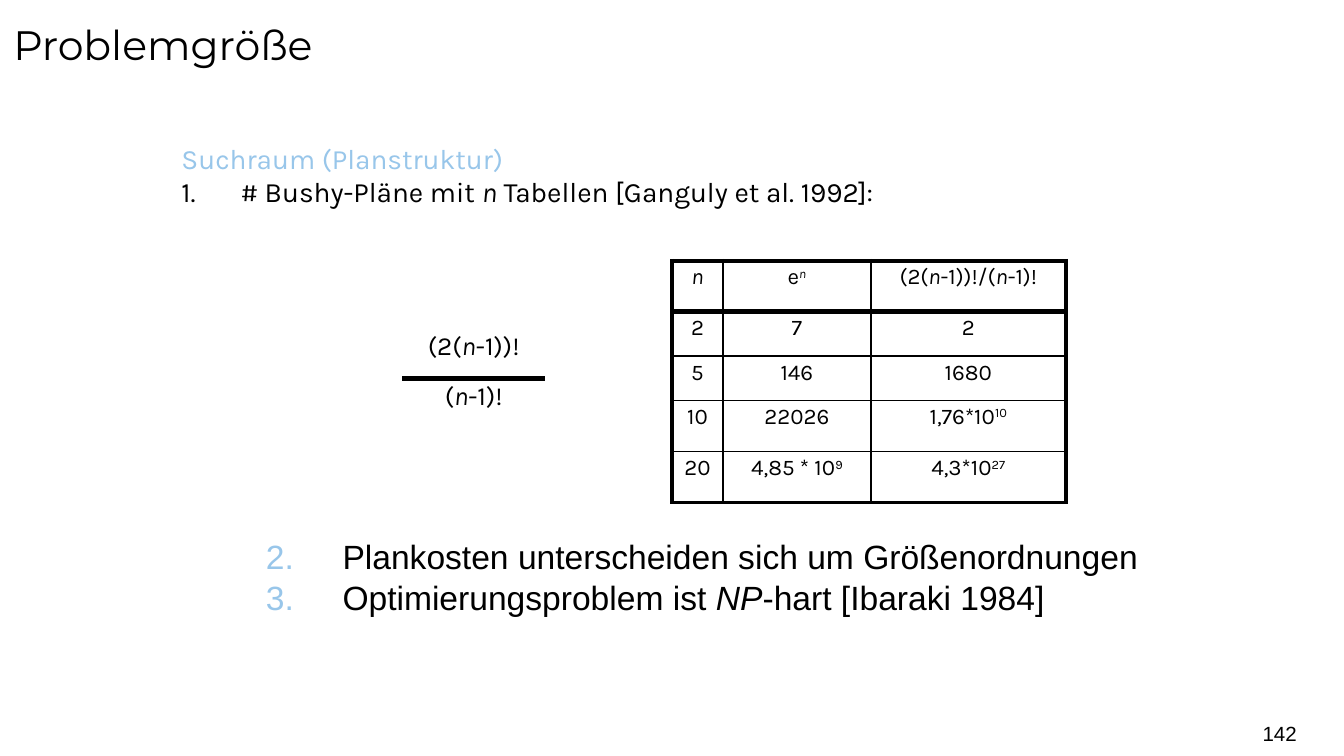
from dataclasses import dataclass

from lxml import etree
from pptx import Presentation
from pptx.dml.color import RGBColor
from pptx.enum import text
from pptx.oxml import ns
from pptx.util import Inches, Pt


@dataclass(frozen=True)
class Theme:
    """Colours, fonts and type sizes of the slide."""
    ink: str = "000000"
    accent: str = "98C6EA"
    title_font: str = "Montserrat"
    body_font: str = "Karla"
    plain_font: str = "Arial"
    title_size: int = 22
    body_size: int = 15
    formula_size: int = 14
    table_size: int = 12
    point_size: int = 18
    number_size: int = 11


THEME = Theme()
ITALIC, SUPER = "italic", "super"
N = ("n", ITALIC)
THIN, MEDIUM, THICK = 1, 2.25, 3


def add_element(parent, tag, **attributes):
    """Append a DrawingML element to its parent."""
    return etree.SubElement(parent, ns.qn(tag), {key: str(value) for key, value in attributes.items()})


def write(paragraph, runs, font, size, color=THEME.ink):
    """Fill a paragraph with plain strings and (text, styles) runs."""
    paragraph.font.name = font
    paragraph.font.size = Pt(size)
    paragraph.font.color.rgb = RGBColor.from_string(color)
    for item in runs:
        content, *styles = (item,) if isinstance(item, str) else item
        run = paragraph.add_run()
        run.text = content
        if ITALIC in styles:
            run.font.italic = True
        if SUPER in styles:
            run._r.get_or_add_rPr().set("baseline", "30000")


def set_list(paragraph, hang, start=None, color=THEME.ink):
    """Give a paragraph a hanging indent and, with a start, a number."""
    properties = paragraph._p.get_or_add_pPr()
    properties.set("marL", str(Inches(hang)))
    properties.set("indent", str(-Inches(hang)))
    if start is None:
        add_element(properties, "a:buNone")
        return
    add_element(add_element(properties, "a:buClr"), "a:srgbClr", val=color)
    add_element(properties, "a:buFont", typeface="+mj-lt")
    add_element(properties, "a:buAutoNum", type="arabicPeriod", startAt=start)


def place(shape, box, anchor=text.MSO_ANCHOR.TOP):
    """Move a shape into its box and return its text frame."""
    shape.left, shape.top, shape.width, shape.height = map(Inches, box)
    frame = shape.text_frame
    frame.word_wrap = True
    frame.auto_size = text.MSO_AUTO_SIZE.NONE
    frame.vertical_anchor = anchor
    return frame


def add_title(slide, box):
    """Place the slide title."""
    paragraph = place(slide.shapes.title, box).paragraphs[0]
    paragraph.alignment = text.PP_ALIGN.LEFT
    paragraph.line_spacing = 1.25
    write(paragraph, ["Problemgröße"], THEME.title_font, THEME.title_size)


def add_search_space(slide, box):
    """Place the heading and the first numbered point."""
    frame = place(slide.placeholders[1], box)
    lines = [
        (["Suchraum (Planstruktur)"], None, THEME.accent),
        (["# Bushy-Pläne mit ", N, " Tabellen [Ganguly et al. 1992]:"], 1, THEME.ink),
    ]
    for index, (runs, start, color) in enumerate(lines):
        paragraph = frame.add_paragraph() if index else frame.paragraphs[0]
        paragraph.space_before = Pt(0)
        set_list(paragraph, 0.44, start)
        write(paragraph, runs, THEME.body_font, THEME.body_size, color)


def set_borders(cell, **widths):
    """Draw the named cell edges with widths in points."""
    properties = cell._tc.get_or_add_tcPr()
    for position, edge in enumerate(edge for edge in "LRTB" if edge in widths):
        line = etree.Element(ns.qn(f"a:ln{edge}"), w=str(Pt(widths[edge])))
        add_element(add_element(line, "a:solidFill"), "a:srgbClr", val=THEME.ink)
        properties.insert(position, line)


def add_grid(slide, box, widths, heights, rows, size):
    """Place an unstyled table of centred cells and return it."""
    table = slide.shapes.add_table(len(rows), len(widths), *map(Inches, box)).table
    table.first_row = table.horz_banding = False
    for column, width in zip(table.columns, widths):
        column.width = Inches(width)
    for row, height, contents in zip(table.rows, heights, rows):
        row.height = Inches(height)
        for cell, runs in zip(row.cells, contents):
            cell.fill.background()
            cell.margin_left = cell.margin_right = Inches(0.07)
            cell.margin_top = cell.margin_bottom = Inches(0.04)
            paragraph = cell.text_frame.paragraphs[0]
            paragraph.alignment = text.PP_ALIGN.CENTER
            paragraph.line_spacing = 0.9
            write(paragraph, runs, THEME.body_font, size)
    return table


def add_growth_table(slide, box):
    """Place the table comparing growth rates."""
    rows = [
        [[N], ["e", ("n", ITALIC, SUPER)], ["(2(", N, "-1))!/(", N, "-1)!"]],
        [["2"], ["7"], ["2"]],
        [["5"], ["146"], ["1680"]],
        [["10"], ["22026"], ["1,76*10", ("10", SUPER)]],
        [["20"], ["4,85 * 10", ("9", SUPER)], ["4,3*10", ("27", SUPER)]],
    ]
    heights = [0.38, 0.33, 0.33, 0.38, 0.38]
    table = add_grid(slide, box, [0.38, 1.1, 1.45], heights, rows, THEME.table_size)
    across = [MEDIUM, THICK, THIN, THIN, THIN, MEDIUM]
    down = [MEDIUM, THIN, THIN, MEDIUM]
    for y in range(len(rows)):
        for x in range(len(rows[0])):
            set_borders(table.cell(y, x), L=down[x], R=down[x + 1], T=across[y], B=across[y + 1])


def add_formula(slide, box):
    """Place the fraction as two cells split by a thick bar."""
    rows = [[["(2(", N, "-1))!"]], [["(", N, "-1)!"]]]
    table = add_grid(slide, box, [box[2]], [box[3] / 2] * 2, rows, THEME.formula_size)
    set_borders(table.cell(0, 0), B=THICK)
    set_borders(table.cell(1, 0), T=THICK)


def add_points(slide, box):
    """Place the remaining numbered points."""
    frame = place(slide.shapes.add_textbox(0, 0, 0, 0), box)
    points = [
        ["Plankosten unterscheiden sich um Größenordnungen"],
        ["Optimierungsproblem ist ", ("NP", ITALIC), "-hart [Ibaraki 1984]"],
    ]
    for index, runs in enumerate(points):
        paragraph = frame.add_paragraph() if index else frame.paragraphs[0]
        set_list(paragraph, 0.57, 2, THEME.accent)
        write(paragraph, runs, THEME.plain_font, THEME.point_size)


def add_page_number(slide, box):
    """Place the page number."""
    frame = place(slide.shapes.add_textbox(0, 0, 0, 0), box, text.MSO_ANCHOR.MIDDLE)
    frame.margin_left = frame.margin_right = 0
    paragraph = frame.paragraphs[0]
    paragraph.alignment = text.PP_ALIGN.RIGHT
    write(paragraph, ["142"], THEME.plain_font, THEME.number_size)


def main():
    """Build and save the slide."""
    presentation = Presentation()
    presentation.slide_width = Inches(10)
    presentation.slide_height = presentation.slide_width * 9 // 16
    slide = presentation.slides.add_slide(presentation.slide_layouts[1])
    add_title(slide, (0, 0, 10, 0.94))
    add_search_space(slide, (1.25, 1, 7.5, 0.99))
    add_growth_table(slide, (5, 1.94, 2.93, 1.8))
    add_formula(slide, (3, 2.44, 1.05, 0.75))
    add_points(slide, (1.88, 3.94, 6.75, 0.71))
    add_page_number(slide, (7.41, 5.31, 2.24, 0.3))
    presentation.save("out.pptx")


if __name__ == "__main__":
    main()
